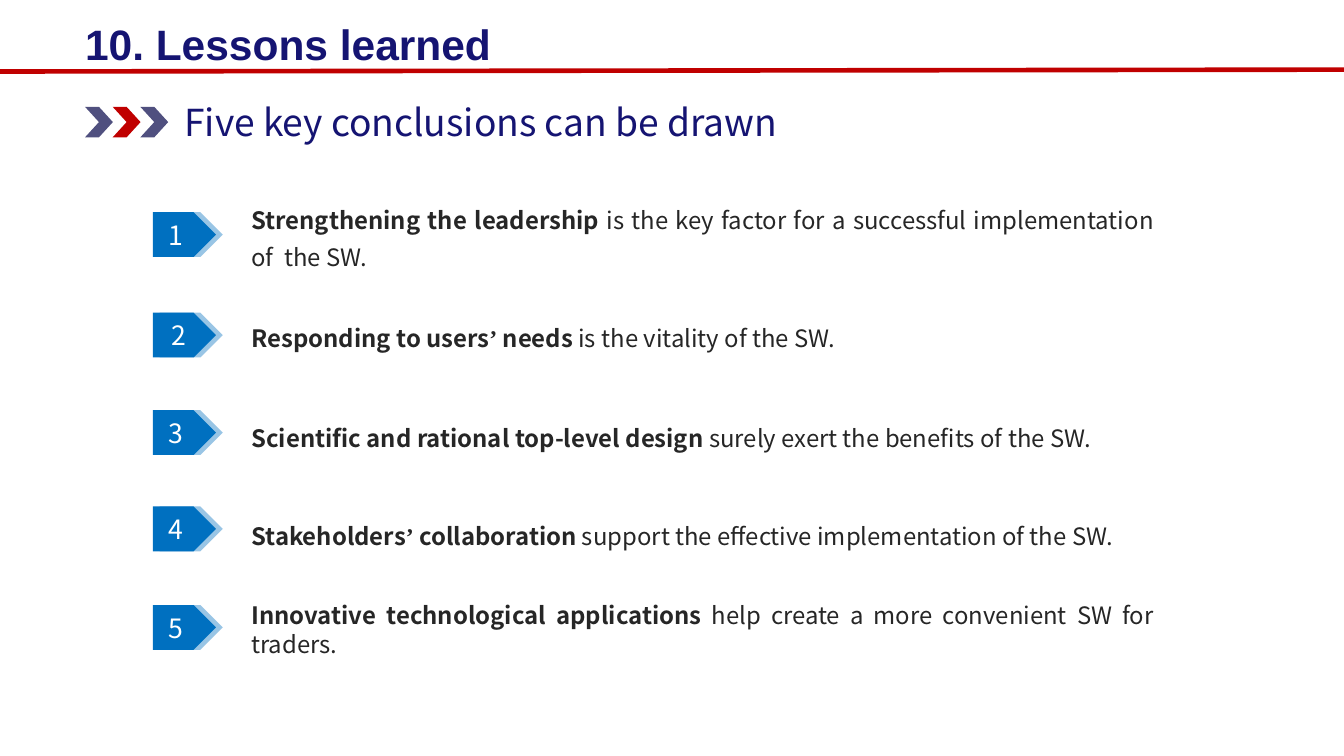
from lxml.etree import SubElement
from pptx import Presentation
from pptx.dml.color import RGBColor
from pptx.enum.shapes import MSO_CONNECTOR as Line, MSO_SHAPE as Shape
from pptx.enum.text import MSO_ANCHOR as Anchor, PP_ALIGN as Align
from pptx.oxml.ns import qn
from pptx.util import Cm, Pt

SANS = "Noto Sans CJK SC"
SERIF = "Times New Roman"
NAVY, RED, BLUE, SLATE = "151472", "C00000", "0070C0", "50507F"
WHITE, DARK = "FFFFFF", "262626"

# label, tag top, text top, line spacing, bold start, plain rest
LESSONS = [
    ("1 ", 5.64, 5.31, 1.3, "Strengthening the leadership ",
     "is the key factor for a successful implementation of  the SW."),
    ("2", 8.31, 8.0, 1.2, "Responding to users’ needs",
     " is the vitality of the SW."),
    ("3 ", 10.9, 10.62, 1.3, "Scientific and rational top-level design ",
     "surely exert the benefits of the SW."),
    ("4 ", 13.46, 13.21, 1.3, "Stakeholders’ collaboration",
     " support the effective implementation of the SW."),
    ("5 ", 16.08, 15.82, 1.0, "Innovative technological applications ",
     "help create a more convenient SW for traders."),
]


def color(code):
    return RGBColor.from_string(code)


def style(font, size, code, name=SANS, bold=False):
    font.size, font.name, font.bold = Pt(size), name, bold
    font.color.rgb = color(code)


def add_box(slide, x, y, w, h):
    box = slide.shapes.add_textbox(Cm(x), Cm(y), Cm(w), Cm(h))
    box.text_frame.word_wrap = True
    return box.text_frame


def add_head(slide, text, place, size, name=SANS, bold=False):
    frame = add_box(slide, *place)
    para = frame.paragraphs[0]
    para.text = text
    style(para.font, size, NAVY, name, bold)
    return frame


def add_solid(group, kind, x, y, w, h, code, alpha=None):
    """Add a filled shape without outline; alpha is its opacity in percent."""
    shape = group.shapes.add_shape(kind, Cm(x), Cm(y), Cm(w), Cm(h))
    shape.shadow.inherit = False
    shape.line.fill.background()
    shape.fill.solid()
    shape.fill.fore_color.rgb = color(code)
    if alpha:
        tint = shape.fill._xPr.find(".//" + qn("a:srgbClr"))
        SubElement(tint, qn("a:alpha"), val=str(alpha * 1000))
    return shape


def add_rule(slide):
    rule = slide.shapes.add_connector(
        Line.STRAIGHT, Cm(0), Cm(1.9), Cm(35.76), Cm(1.85))
    rule.line.width = Pt(3.5)
    rule.line.color.rgb = color(RED)
    SubElement(rule._element.spPr, qn("a:effectLst"))


def add_arrows(slide):
    group = slide.shapes.add_group_shape()
    for i, code in enumerate((SLATE, RED, SLATE)):
        add_solid(group, Shape.CHEVRON, 2.26 + 0.735 * i, 2.84, 0.74, 0.81, code)


def add_tag(slide, label, top):
    group = slide.shapes.add_group_shape()
    add_solid(group, Shape.PENTAGON, 4.24, top, 1.68, 1.19, BLUE, 40)
    tag = add_solid(group, Shape.PENTAGON, 4.06, top, 1.68, 1.19, BLUE)
    tag.text_frame.vertical_anchor = Anchor.MIDDLE
    para = tag.text_frame.paragraphs[0]
    para.text = label
    para.alignment = Align.CENTER
    style(para.font, 20, WHITE)


def add_lesson(slide, top, space, lead, rest):
    frame = add_box(slide, 6.68, top, 23.98, 1.83)
    frame.margin_left = frame.margin_right = 0
    frame.margin_top = frame.margin_bottom = 0
    frame.vertical_anchor = Anchor.MIDDLE
    para = frame.paragraphs[0]
    para.alignment = Align.JUSTIFY
    para.line_spacing = space
    before, mark, after = lead.partition("’")
    parts = [(before, SANS, True), (mark, SERIF, True),
             (after, SANS, True), (rest, SANS, False)]
    for text, name, bold in parts:
        if text:
            run = para.add_run()
            run.text = text
            style(run.font, 18, DARK, name, bold)


def main():
    deck = Presentation()
    deck.slide_width, deck.slide_height = Cm(35.71), Cm(20.09)
    slide = deck.slides.add_slide(deck.slide_layouts[6])
    title = add_head(slide, "10. Lessons learned", (2.01, 0.25, 12.07, 1.42),
                     32, "Arial", True)
    title.margin_top, title.margin_bottom = Cm(0.23), 0
    add_rule(slide)
    for label, tag_top, text_top, space, lead, rest in LESSONS:
        add_tag(slide, label, tag_top)
        add_lesson(slide, text_top, space, lead, rest)
    add_head(slide, "Five key conclusions can be drawn",
             (4.65, 2.51, 23.01, 1.45), 28)
    add_arrows(slide)
    deck.save("out.pptx")


if __name__ == "__main__":
    main()
